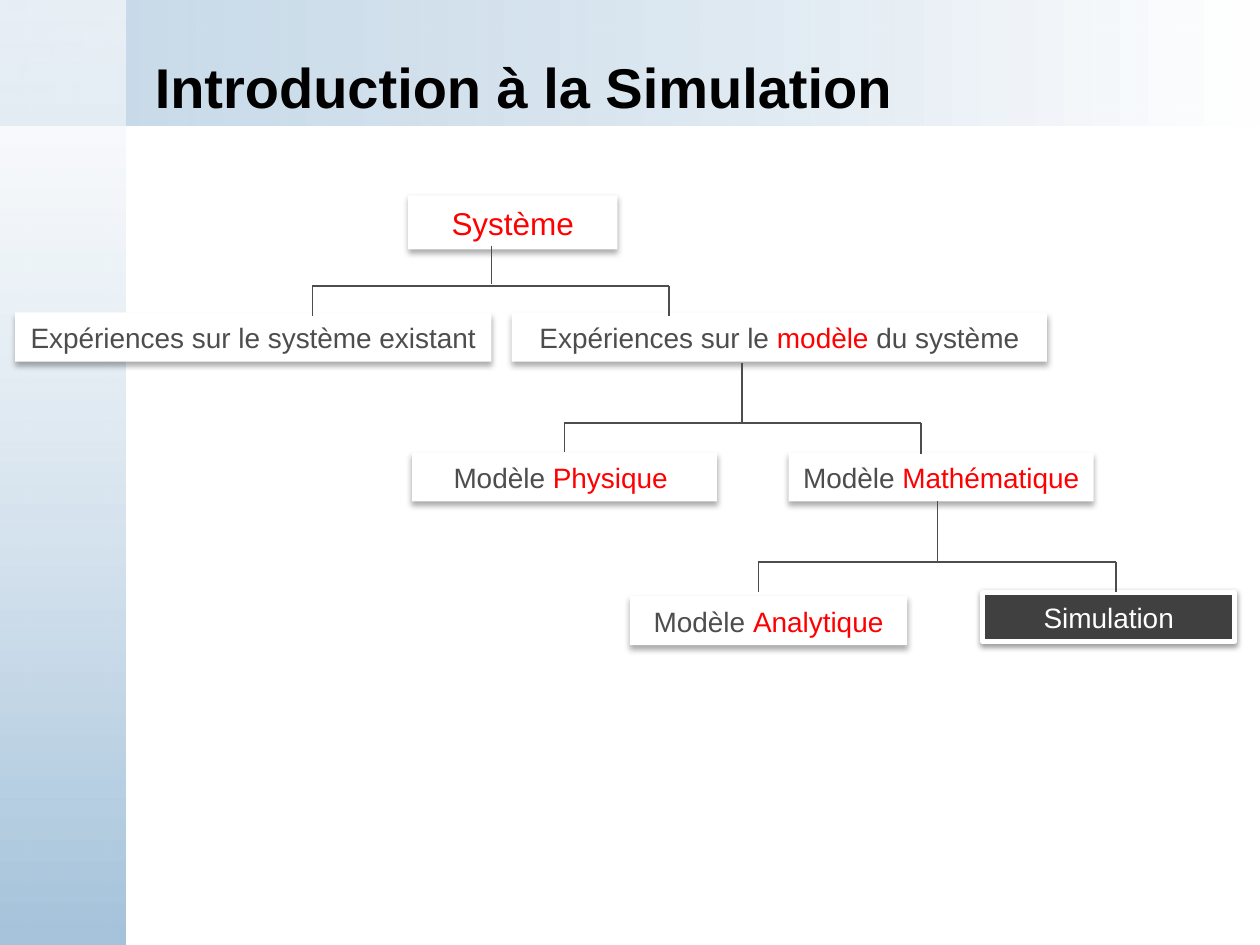
from lxml import etree
from pptx import Presentation
from pptx.dml.color import RGBColor
from pptx.enum.shapes import MSO_CONNECTOR, MSO_SHAPE
from pptx.enum.text import MSO_ANCHOR, MSO_AUTO_SIZE, PP_ALIGN
from pptx.oxml import parse_xml
from pptx.oxml.ns import nsdecls, qn
from pptx.util import Inches, Pt

RECT = MSO_SHAPE.RECTANGLE
STRAIGHT = MSO_CONNECTOR.STRAIGHT
MIDDLE = MSO_ANCHOR.MIDDLE
FIT_SHAPE = MSO_AUTO_SIZE.SHAPE_TO_FIT_TEXT
CENTER = PP_ALIGN.CENTER

WHITE = RGBColor(0xFF, 0xFF, 0xFF)
BLACK = RGBColor(0x00, 0x00, 0x00)
BLUE = RGBColor(0xA5, 0xC3, 0xDB)
GRAY = RGBColor(0x4D, 0x4D, 0x4D)
DARK = RGBColor(0x40, 0x40, 0x40)
RED = RGBColor(0xFF, 0x00, 0x00)
FONT = "Arial"
BOX_H = 0.39


def add_band(s, x, y, w, h, colors, opacity, angle):
    """Gradient band whose first stop has the given opacity in percent."""
    sp = s.shapes.add_shape(RECT, Inches(x), Inches(y), Inches(w), Inches(h))
    sp.shadow.inherit = False
    sp.line.fill.background()
    sp.fill.gradient()
    sp.fill.gradient_angle = angle
    for stop, color in zip(sp.fill.gradient_stops, colors):
        stop.color.rgb = color
    first = sp.fill._xPr.find(".//" + qn("a:srgbClr"))
    etree.SubElement(first, qn("a:alpha"), val=str(opacity * 1000))


def add_title(s, x, y, w, h, text):
    sp = s.shapes.add_textbox(Inches(x), Inches(y), Inches(w), Inches(h))
    tf = sp.text_frame
    tf.word_wrap = True
    tf.vertical_anchor = MIDDLE
    p = tf.paragraphs[0]
    p.text = text
    p.font.name, p.font.size, p.font.bold = FONT, Pt(32), True
    p.font.color.rgb = BLACK


def add_shadow(sp, blur, dist, opacity):
    """Drop shadow straight down, with blur and distance in points."""
    sp.shadow.inherit = False
    sp._element.spPr.find(qn("a:effectLst")).append(parse_xml(
        f'<a:outerShdw {nsdecls("a")} blurRad="{Pt(blur)}" dist="{Pt(dist)}" '
        f'dir="5400000" algn="t" rotWithShape="0"><a:srgbClr val="000000">'
        f'<a:alpha val="{opacity * 1000}"/></a:srgbClr></a:outerShdw>'))


def add_node(s, x, y, w, runs, h=BOX_H, size=16, highlight=False):
    sp = s.shapes.add_shape(RECT, Inches(x), Inches(y), Inches(w), Inches(h))
    sp.fill.solid()
    if highlight:
        sp.fill.fore_color.rgb = DARK
        sp.line.color.rgb = WHITE
        sp.line.width = Pt(3)
        add_shadow(sp, 3.1, 1.6, 38)
    else:
        sp.fill.fore_color.rgb = WHITE
        sp.line.fill.background()
        add_shadow(sp, 3.5, 2.2, 32)
    tf = sp.text_frame
    tf.word_wrap = True
    tf.auto_size = FIT_SHAPE
    tf.vertical_anchor = MSO_ANCHOR.TOP
    p = tf.paragraphs[0]
    p.alignment = CENTER
    p.line_spacing = 1.07
    p.space_after = Pt(8)
    p.font.name, p.font.size = FONT, Pt(size)
    for text, color in runs:
        r = p.add_run()
        r.text = text
        r.font.color.rgb = color
    return sp


def add_line(s, x1, y1, x2, y2):
    line = s.shapes.add_connector(
        STRAIGHT, Inches(x1), Inches(y1), Inches(x2), Inches(y2))
    line.line.color.rgb = GRAY
    line.line.width = Pt(1)
    etree.SubElement(line._element.spPr, qn("a:effectLst"))
    return line


def add_fork(s, left, right, stem, stem_top, bar, stem_bottom=None, left_node=None):
    """Stem, crossbar and two drops; the left drop may join a node's top."""
    add_line(s, stem, stem_top, stem, stem_bottom or bar)
    add_line(s, left, bar, right, bar)
    drops = [add_line(s, x, bar, x, bar + 0.24) for x in (left, right)]
    if left_node is not None:
        drops[0].end_connect(left_node, 0)


def add_tree(s):
    add_node(s, 3.24, 1.55, 1.66, [("Système", RED)], h=0.43, size=18)
    add_node(s, 4.06, 2.48, 4.25, [("Expériences sur le ", GRAY), ("modèle", RED),
                                   (" du système", GRAY)])
    add_node(s, 0.12, 2.48, 3.78, [("Expériences sur le système existant", GRAY)])
    physical = add_node(s, 3.27, 3.59, 2.42, [("Modèle ", GRAY), ("Physique ", RED)])
    add_node(s, 6.26, 3.59, 2.42, [("Modèle ", GRAY), ("Mathématique", RED)])
    add_node(s, 7.8, 4.7, 2, [("Simulation", WHITE)], highlight=True)
    add_node(s, 5, 4.73, 2.2, [("Modèle ", GRAY), ("Analytique", RED)])

    add_fork(s, 6.02, 8.86, stem=7.44, stem_top=3.98, bar=4.46)
    add_fork(s, 4.48, 7.31, stem=5.89, stem_top=2.88, bar=3.36, left_node=physical)
    add_fork(s, 2.48, 5.31, stem=3.9, stem_top=1.95, bar=2.27, stem_bottom=2.25)


def main():
    prs = Presentation()
    prs.slide_width, prs.slide_height = Inches(10), Inches(7.5)
    s = prs.slides.add_slide(prs.slide_layouts[6])
    add_band(s, 0, 0, 10, 1, (BLUE, WHITE), opacity=62, angle=0)
    add_band(s, 0, 0, 1, 7.5, (WHITE, BLUE), opacity=59, angle=270)
    add_title(s, 1.13, 0.44, 8.45, 0.49, "Introduction à la Simulation")
    add_tree(s)
    prs.save("out.pptx")


if __name__ == "__main__":
    main()
